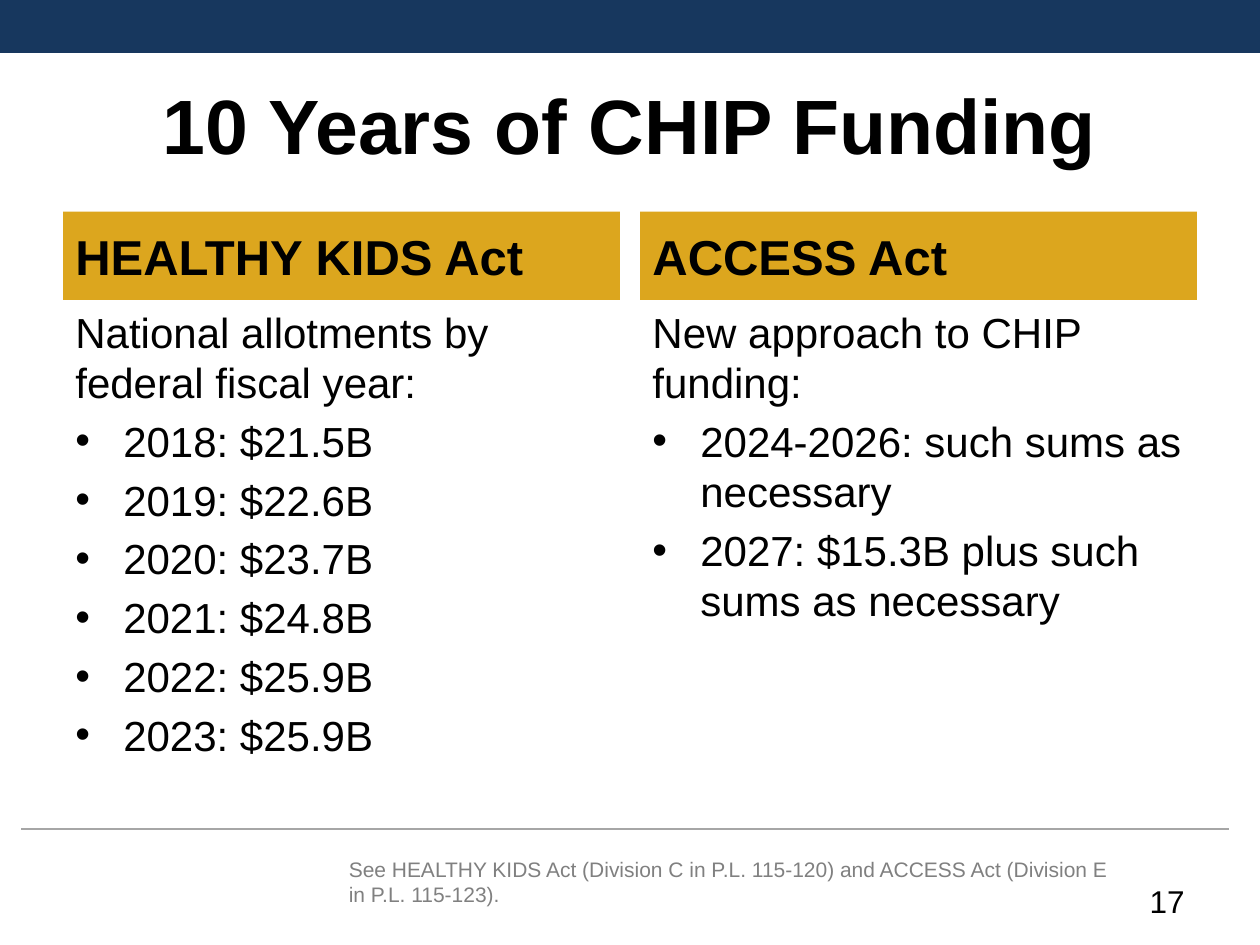
from lxml import etree
from pptx import Presentation
from pptx.dml.color import RGBColor
from pptx.enum.shapes import MSO_CONNECTOR, MSO_SHAPE
from pptx.enum.text import MSO_ANCHOR, PP_ALIGN
from pptx.oxml.ns import qn
from pptx.util import Inches, Pt

# Content
TITLE = "10 Years of CHIP Funding"
COLUMNS = [
    ("HEALTHY KIDS Act", "National allotments by federal fiscal year:",
     ["2018: $21.5B", "2019: $22.6B", "2020: $23.7B",
      "2021: $24.8B", "2022: $25.9B", "2023: $25.9B"]),
    ("ACCESS Act", "New approach to CHIP funding:",
     ["2024-2026: such sums as necessary",
      "2027: $15.3B plus such sums as necessary"]),
]
SOURCE = ("See HEALTHY KIDS Act (Division C in P.L. 115-120) "
          "and ACCESS Act (Division E in P.L. 115-123).")
PAGE_NUMBER = "17"

# Style and layout
COLORS = {"navy": "17375E", "gold": "DCA61E", "rule": "A6A6A6",
          "text": "000000", "source": "808080"}
FONT = "Arial"
WIDTH, HEIGHT = 10, 7.5
MARGIN, COLUMN_WIDTH = 0.5, 4.42
COLUMN_STEP = WIDTH - 2 * MARGIN - COLUMN_WIDTH
HEADER_TOP, HEADER_HEIGHT, BODY_HEIGHT = 1.68, 0.7, 4.04
INDENT = Inches(0.38)


def color(name):
    return RGBColor.from_string(COLORS[name])


def add_bar(slide, box, fill):
    bar = slide.shapes.add_shape(MSO_SHAPE.RECTANGLE, *map(Inches, box))
    bar.shadow.inherit = False
    bar.fill.solid()
    bar.fill.fore_color.rgb = color(fill)
    bar.line.fill.background()
    return bar


def add_box(slide, box):
    return slide.shapes.add_textbox(*map(Inches, box))


def add_bullet(paragraph):
    properties = paragraph._p.get_or_add_pPr()
    properties.set("marL", str(INDENT))
    properties.set("indent", str(-INDENT))
    font = etree.SubElement(properties, qn("a:buFont"))
    font.set("typeface", FONT)
    etree.SubElement(properties, qn("a:buChar")).set("char", "•")


def write(shape, lines, size, bold=False, align=PP_ALIGN.LEFT,
          anchor=MSO_ANCHOR.TOP, ink="text"):
    """Fill a shape with text; every line after the first is a bullet."""
    frame = shape.text_frame
    frame.word_wrap = True
    frame.vertical_anchor = anchor
    for index, line in enumerate(lines):
        paragraph = frame.add_paragraph() if index else frame.paragraphs[0]
        paragraph.text = line
        paragraph.alignment = align
        if index:
            paragraph.space_before = Pt(0.2 * size)
            add_bullet(paragraph)
        paragraph.font.name = FONT
        paragraph.font.size = Pt(size)
        paragraph.font.bold = bold
        paragraph.font.color.rgb = color(ink)


def main():
    presentation = Presentation()
    presentation.slide_width = Inches(WIDTH)
    presentation.slide_height = Inches(HEIGHT)
    slide = presentation.slides.add_slide(presentation.slide_layouts[6])

    # Top band and footer rule
    add_bar(slide, (0, 0, WIDTH, 0.42), "navy")
    rule = slide.shapes.add_connector(
        MSO_CONNECTOR.STRAIGHT, *map(Inches, (0.17, 6.58, 9.75, 6.58)))
    rule.line.color.rgb = color("rule")
    rule.line.width = Pt(0.75)
    etree.SubElement(rule._element.spPr, qn("a:effectLst"))

    # Title
    write(add_box(slide, (MARGIN, 0.42, WIDTH - 2 * MARGIN, 1.13)), [TITLE],
          44, bold=True, align=PP_ALIGN.CENTER, anchor=MSO_ANCHOR.MIDDLE)

    # Two columns, each a gold header over a bulleted body
    for index, (header, intro, bullets) in enumerate(COLUMNS):
        left = MARGIN + index * COLUMN_STEP
        bar = add_bar(slide, (left, HEADER_TOP, COLUMN_WIDTH, HEADER_HEIGHT),
                      "gold")
        write(bar, [header], 28, bold=True, anchor=MSO_ANCHOR.MIDDLE)
        body = add_box(slide, (left, HEADER_TOP + HEADER_HEIGHT,
                               COLUMN_WIDTH, BODY_HEIGHT))
        write(body, [intro, *bullets], 24)

    # Footer
    write(add_box(slide, (2.67, 6.75, 6.33, 0.6)), [SOURCE], 12, ink="source")
    write(add_box(slide, (7.17, 6.95, 2.33, 0.4)), [PAGE_NUMBER], 18,
          align=PP_ALIGN.RIGHT)

    presentation.save("out.pptx")


if __name__ == "__main__":
    main()
